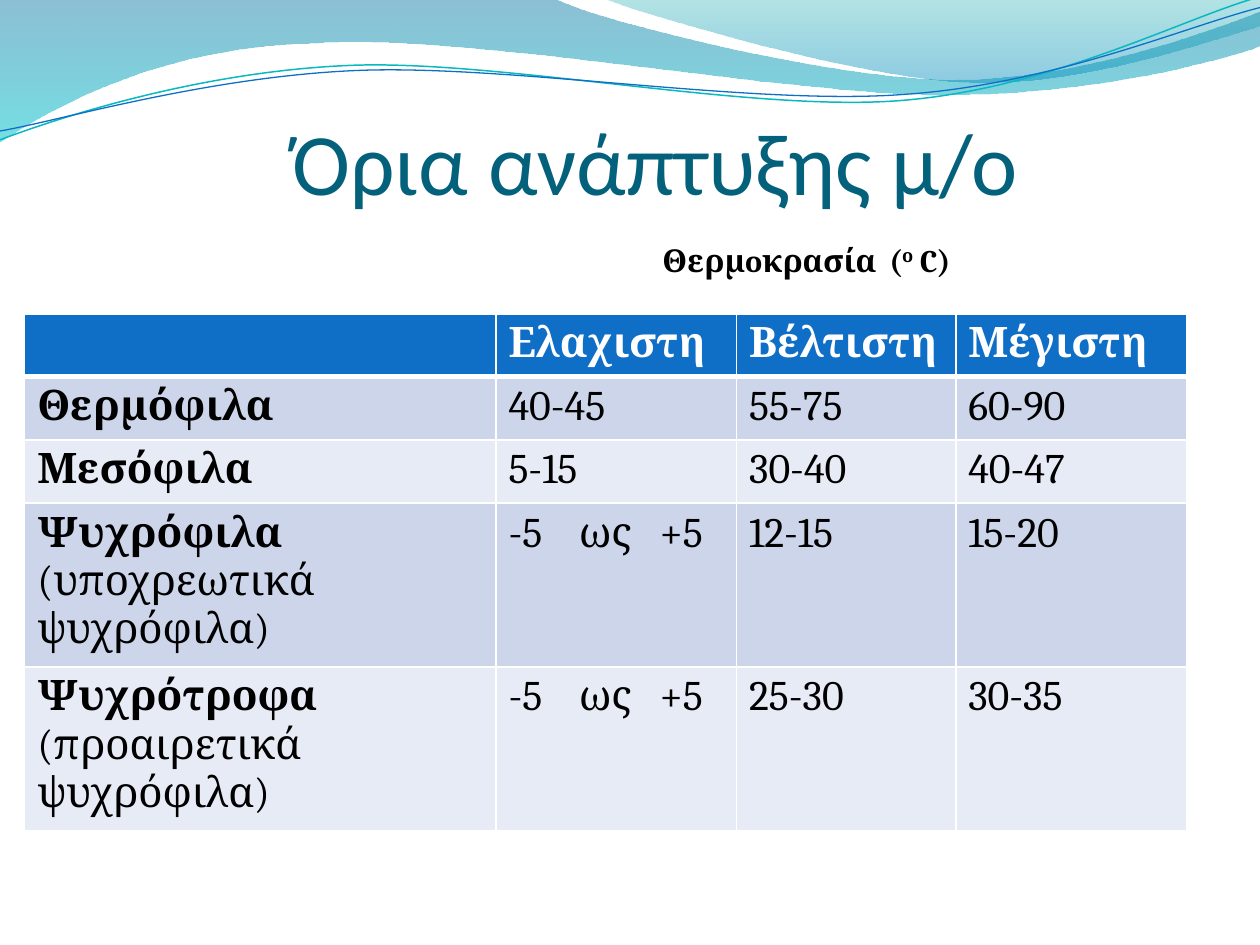
import pptx
import pptx.dml.color
import pptx.enum.text
import pptx.oxml.ns
import pptx.util
from collections import namedtuple
from lxml import etree

RGBColor = pptx.dml.color.RGBColor
Box = namedtuple("Box", "left top width height")

# The slide is a grid of 100 columns by 75 rows of square cells.
CELL = pptx.util.Inches(0.1)
COLUMNS, ROWS = 100, 75

WHITE = RGBColor(0xFF, 0xFF, 0xFF)
BLACK = RGBColor(0x00, 0x00, 0x00)
TITLE_TEAL = RGBColor(0x04, 0x61, 0x7B)
HEADER_BLUE = RGBColor(0x0F, 0x6F, 0xC6)
LINE_TEAL = RGBColor(0x0A, 0xB8, 0xBF)
BANDS = (RGBColor(0xCC, 0xD5, 0xEA), RGBColor(0xE7, 0xEB, 0xF5))
# Each gradient stop is a colour and its opacity in percent.
LEFT_WAVE = ((RGBColor(0x00, 0x74, 0xA1), 45), (RGBColor(0x00, 0xC6, 0xCF), 55))
RIGHT_WAVE = ((RGBColor(0x00, 0xA1, 0xA9), 30), (RGBColor(0x00, 0x8B, 0xBF), 45))

# Outlines: a pair is a straight step, six numbers are a Bézier step.
WAVES = (
    (((0, 0), (44, -0.1), (47.6, 1.7, 66.4, 6.3, 75.8, 6.3),
      (85.3, 6.3, 95.8, 2.6, 100, 0.9), (100.1, 3.6),
      (98.3, 4.4, 87, 7.6, 74.6, 7.5), (62.2, 7.5, 38.2, 2.8, 25.7, 3.4),
      (12.9, 3.6, 4.6, 8.3, -0.1, 11.3)), LEFT_WAVE),
    (((47.9, -0.1), (50.9, 1.1, 68.2, 6.2, 76.9, 6.5),
      (85.6, 6.9, 96.1, 3.2, 100, 2.1), (100, 0)), RIGHT_WAVE),
)
WAVE_LINES = (
    (((0, 11.1), (4.8, 9.3, 15.8, 5.7, 27.7, 5.2),
      (39.5, 4.7, 59.3, 8.9, 71.3, 8), (83.3, 7.1, 93.8, 1.5, 99.8, -0.2)),
     LINE_TEAL, 0.85),
    (((0, 10.4), (4.7, 9.6, 16.4, 6.1, 28.3, 5.6),
      (40.3, 5.1, 59.7, 8.4, 71.7, 7.5), (83.6, 6.7, 94.1, 2.1, 100, 0.6)),
     HEADER_BLUE, 0.75),
)

COLUMN_WIDTHS = (37.4, 19.1, 17.4, 18.3)
ROW_HEIGHT = 4.1
RANGE_TABS = (5.6, 12)
UNIT_TABS = (18,)
HEADINGS = ("", "Ελαχιστη", "Βέλτιστη", "Μέγιστη")
# Each group is its name, an explanation, and its three temperatures.
GROUPS = (
    ("Θερμόφιλα", "", "40-45", "55-75", "60-90"),
    ("Μεσόφιλα", "", "5-15", "30-40", "40-47"),
    ("Ψυχρόφιλα", " (υποχρεωτικά ψυχρόφιλα)", "-5\tως\t+5", "12-15", "15-20"),
    ("Ψυχρότροφα", " (προαιρετικά ψυχρόφιλα)", "-5\tως\t+5", "25-30", "30-35"),
)


def grid(count):
    return round(count * CELL)


def add_xml(parent, tag, **attributes):
    return etree.SubElement(parent, pptx.oxml.ns.qn(tag), attributes)


def add_run(paragraph, text, color, **formats):
    run = paragraph.add_run()
    run.text = text
    run.font.color.rgb = color
    for name, value in formats.items():
        setattr(run.font, name, value)
    return run


def add_tab_stops(paragraph, positions):
    stops = add_xml(paragraph._p.get_or_add_pPr(), "a:tabLst")
    for position in positions:
        add_xml(stops, "a:tab", pos=str(grid(position)), algn="l")


def add_text_frame(slide, box, **formats):
    shape = slide.shapes.add_textbox(*map(grid, box))
    for name, value in {"word_wrap": True, **formats}.items():
        setattr(shape.text_frame, name, value)
    return shape.text_frame


def add_outline(slide, box, steps, close):
    """Draw every point as a straight step, then join each Bézier step's three."""
    points = [(grid(box.left + step[i]), grid(box.top + step[i + 1]))
              for step in steps for i in range(0, len(step), 2)]
    builder = slide.shapes.build_freeform(*points[0])
    builder.add_line_segments(points[1:], close=close)
    shape = builder.convert_to_shape()
    shape.shadow.inherit = False
    segments = iter(list(shape.element.iter(pptx.oxml.ns.qn("a:lnTo"))))
    for step in steps[1:]:
        first = next(segments)
        if len(step) == 6:
            first.tag = pptx.oxml.ns.qn("a:cubicBezTo")
            for segment in (next(segments), next(segments)):
                first.append(segment[0])
                segment.getparent().remove(segment)
    return shape


def fill_downwards(shape, stops):
    shape.fill.gradient()
    shape.fill.gradient_angle = 270
    for stop, (color, opacity) in zip(shape.fill.gradient_stops, stops):
        stop.color.rgb = color
    colors = shape.element.spPr.iter(pptx.oxml.ns.qn("a:srgbClr"))
    for element, (color, opacity) in zip(list(colors), stops):
        add_xml(element, "a:alpha", val=str(opacity * 1000))


def add_waves(slide, box):
    for steps, stops in WAVES:
        wave = add_outline(slide, box, steps, close=True)
        fill_downwards(wave, stops)
        wave.line.fill.background()
    for steps, color, width in WAVE_LINES:
        line = add_outline(slide, box, steps, close=False)
        line.fill.background()
        line.line.color.rgb = color
        line.line.width = pptx.util.Pt(width)


def add_title(slide, box):
    frame = add_text_frame(
        slide, box, margin_left=grid(18.9), margin_right=0, margin_bottom=0,
        vertical_anchor=pptx.enum.text.MSO_ANCHOR.BOTTOM)
    add_run(frame.paragraphs[0], "Όρια ανάπτυξης μ/ο", TITLE_TEAL,
            name="Calibri", size=pptx.util.Pt(50))


def add_unit_label(slide, box):
    paragraph = add_text_frame(slide, box).paragraphs[0]
    add_tab_stops(paragraph, UNIT_TABS)
    for text, baseline in (("Θερμoκρασία\t(", 0), ("ο", 30), (" C)", 0)):
        run = add_run(paragraph, text, BLACK, name="Cambria",
                      size=pptx.util.Pt(18), bold=True)
        run.font._element.set("baseline", str(baseline * 1000))


def style_cell(cell, fill, bottom_width):
    cell.fill.solid()
    cell.fill.fore_color.rgb = fill
    properties = cell._tc.get_or_add_tcPr()
    widths = (("L", 1), ("R", 1), ("T", 1), ("B", bottom_width))
    for position, (side, width) in enumerate(widths):
        border = add_xml(properties, f"a:ln{side}", w=str(pptx.util.Pt(width)))
        add_xml(add_xml(border, "a:solidFill"), "a:srgbClr", val=str(WHITE))
        properties.insert(position, border)


def write_cell(cell, parts, color):
    """Write (text, bold) parts, with tab stops where a part has tabs."""
    paragraph = cell.text_frame.paragraphs[0]
    for text, bold in parts:
        if "\t" in text:
            add_tab_stops(paragraph, RANGE_TABS)
        if text:
            add_run(paragraph, text, color, name="Cambria",
                    size=pptx.util.Pt(24), bold=bold)


def add_temperature_table(slide, box):
    table = slide.shapes.add_table(
        len(GROUPS) + 1, len(HEADINGS), *map(grid, box)).table
    for column, width in zip(table.columns, COLUMN_WIDTHS):
        column.width = grid(width)

    for cell, heading in zip(table.rows[0].cells, HEADINGS):
        style_cell(cell, HEADER_BLUE, bottom_width=3)
        write_cell(cell, [(heading, True)], WHITE)
    for index, (name, explanation, *ranges) in enumerate(GROUPS):
        contents = [[(name, True), (explanation, False)]]
        contents += [[(text, False)] for text in ranges]
        for cell, parts in zip(table.rows[index + 1].cells, contents):
            style_cell(cell, BANDS[index % 2], bottom_width=1)
            write_cell(cell, parts, BLACK)


def main():
    presentation = pptx.Presentation()
    presentation.slide_width = grid(COLUMNS)
    presentation.slide_height = grid(ROWS)
    slide = presentation.slides.add_slide(presentation.slide_layouts[6])
    add_waves(slide, Box(0, 0, COLUMNS, 11.3))
    add_title(slide, Box(4.3, 4.4, 90, 12.5))
    add_temperature_table(
        slide, Box(1.96, 24.9, sum(COLUMN_WIDTHS), ROW_HEIGHT * (len(GROUPS) + 1)))
    add_unit_label(slide, Box(51.6, 18.6, 38.6, 7.1))
    presentation.save("out.pptx")


if __name__ == "__main__":
    main()
